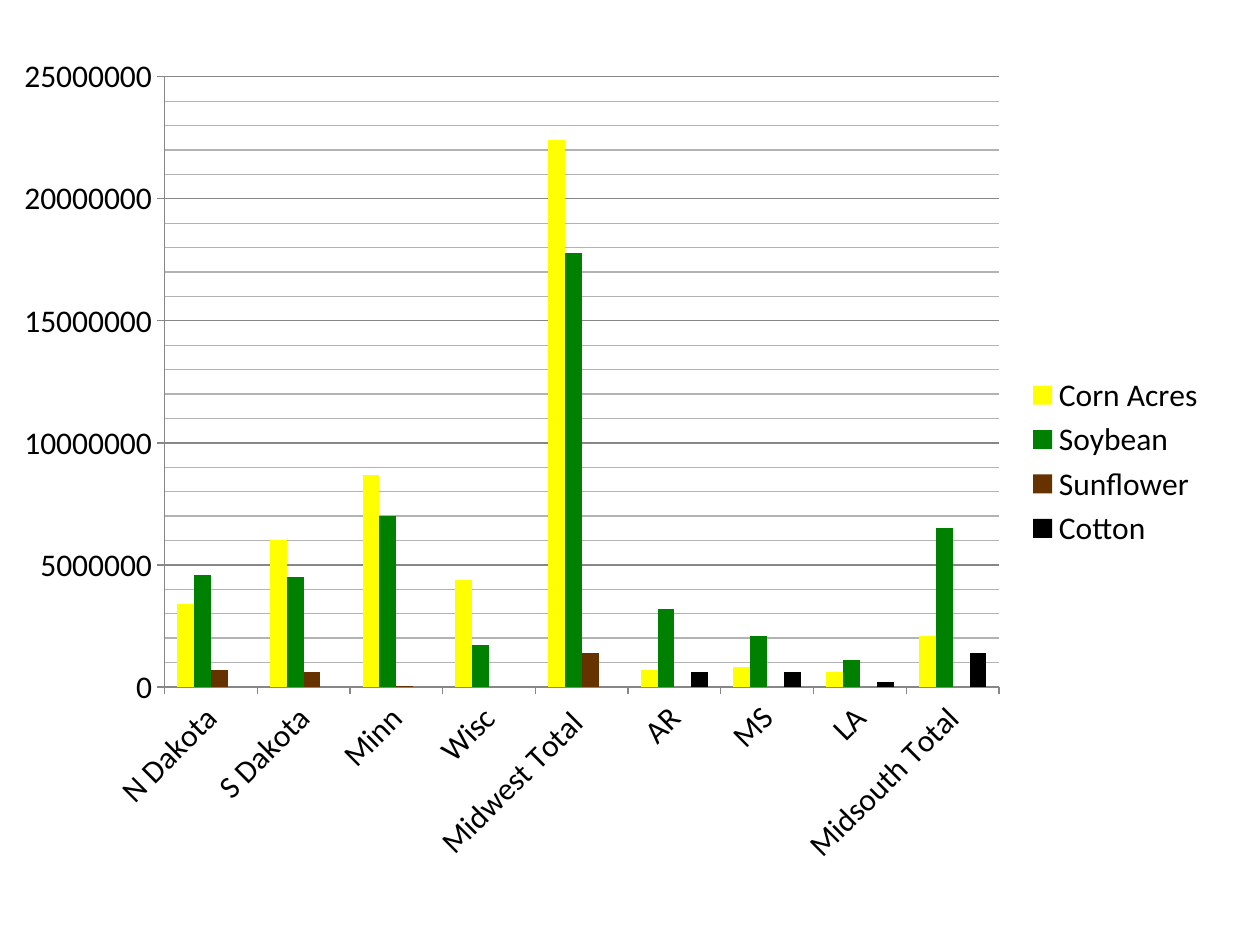
from lxml.etree import SubElement
from pptx import Presentation
from pptx.chart.data import CategoryChartData
from pptx.dml.color import RGBColor
from pptx.enum.chart import XL_CHART_TYPE, XL_LEGEND_POSITION, XL_TICK_MARK
from pptx.oxml.ns import qn
from pptx.util import Inches, Pt

MILLION = 1_000_000
AXIS_GRAY, MINOR_GRAY = "878787", "B3B3B3"
REGIONS = ["N Dakota", "S Dakota", "Minn", "Wisc", "Midwest Total ",
           "AR", "MS", "LA", "Midsouth Total"]
# Crop: (colour, millions of acres per region)
CROPS = {
    "Corn Acres": ("FFFF00", [3.4, 6, 8.7, 4.4, 22.4, 0.7, 0.8, 0.6, 2.1]),
    "Soybean": ("008000", [4.6, 4.5, 7, 1.7, 17.8, 3.2, 2.1, 1.1, 6.5]),
    "Sunflower": ("663300", [0.7, 0.6, 0.05, None, 1.4] + [None] * 4),
    "Cotton": ("000000", [None] * 5 + [0.6, 0.6, 0.2, 1.4]),
}


def color(hex_code):
    return RGBColor.from_string(hex_code)


def style_line(line, hex_code):
    line.color.rgb = color(hex_code)
    line.width = Pt(0.75)


def acreage_data():
    data = CategoryChartData(number_format="General")
    data.categories = REGIONS
    for crop, (_, acres) in CROPS.items():
        data.add_series(crop, [None if a is None else round(a * MILLION) for a in acres])
    return data


def style_minor_gridlines(axis, hex_code):
    gridlines = axis._element.find(qn("c:minorGridlines"))
    line = SubElement(SubElement(gridlines, qn("c:spPr")), qn("a:ln"), w=str(Pt(0.75)))
    fill = SubElement(line, qn("a:solidFill"))
    SubElement(fill, qn("a:srgbClr"), val=hex_code)


def style_axes(chart):
    regions, acres = chart.category_axis, chart.value_axis
    for axis in (regions, acres):
        axis.major_tick_mark = XL_TICK_MARK.OUTSIDE
        axis.minor_tick_mark = XL_TICK_MARK.NONE
        axis.tick_labels.font.size = Pt(18)
        style_line(axis.format.line, AXIS_GRAY)
    # Slanted region names
    regions._element.find(qn("c:txPr")).find(qn("a:bodyPr")).set("rot", "-2700000")

    acres.minimum_scale, acres.maximum_scale = 0, 25 * MILLION
    acres.major_unit, acres.minor_unit = 5 * MILLION, MILLION
    acres.has_major_gridlines = acres.has_minor_gridlines = True
    style_line(acres.major_gridlines.format.line, AXIS_GRAY)
    style_minor_gridlines(acres, MINOR_GRAY)


def place_plot(chart, left, top, width, height):
    """Fix the inner plot area, in shares of the chart's size."""
    plot_area = chart._chartSpace.chart.plotArea
    layout = plot_area.find(qn("c:layout"))
    if layout is None:
        layout = SubElement(plot_area, qn("c:layout"))
        plot_area.insert(0, layout)
    manual = SubElement(layout, qn("c:manualLayout"))
    settings = {"layoutTarget": "inner", "xMode": "edge", "yMode": "edge",
                "x": left, "y": top, "w": width, "h": height}
    for tag, value in settings.items():
        SubElement(manual, qn(f"c:{tag}")).set("val", str(value))


def add_acreage_chart(slide):
    chart = slide.shapes.add_chart(
        XL_CHART_TYPE.COLUMN_CLUSTERED, 0, Inches(0.33), Inches(9.67), Inches(6.67),
        acreage_data()).chart
    chart.has_title = False
    chart.font.name, chart.font.size = "Calibri", Pt(18)
    chart.font.color.rgb = color("000000")

    # Columns
    columns = chart.plots[0]
    columns.vary_by_categories = False
    columns.gap_width, columns.overlap = 150, 0
    for crop, (fill, _) in zip(columns.series, CROPS.values()):
        crop.invert_if_negative = False
        crop.format.fill.solid()
        crop.format.fill.fore_color.rgb = color(fill)

    # Legend
    chart.has_legend = True
    chart.legend.position = XL_LEGEND_POSITION.RIGHT
    chart.legend.include_in_layout = False

    style_axes(chart)
    place_plot(chart, 0.135, 0.042, 0.685, 0.726)


def main():
    deck = Presentation()
    deck.slide_width, deck.slide_height = Inches(10), Inches(7.5)
    slide = deck.slides.add_slide(deck.slide_layouts[6])
    add_acreage_chart(slide)
    deck.save("out.pptx")


if __name__ == "__main__":
    main()
